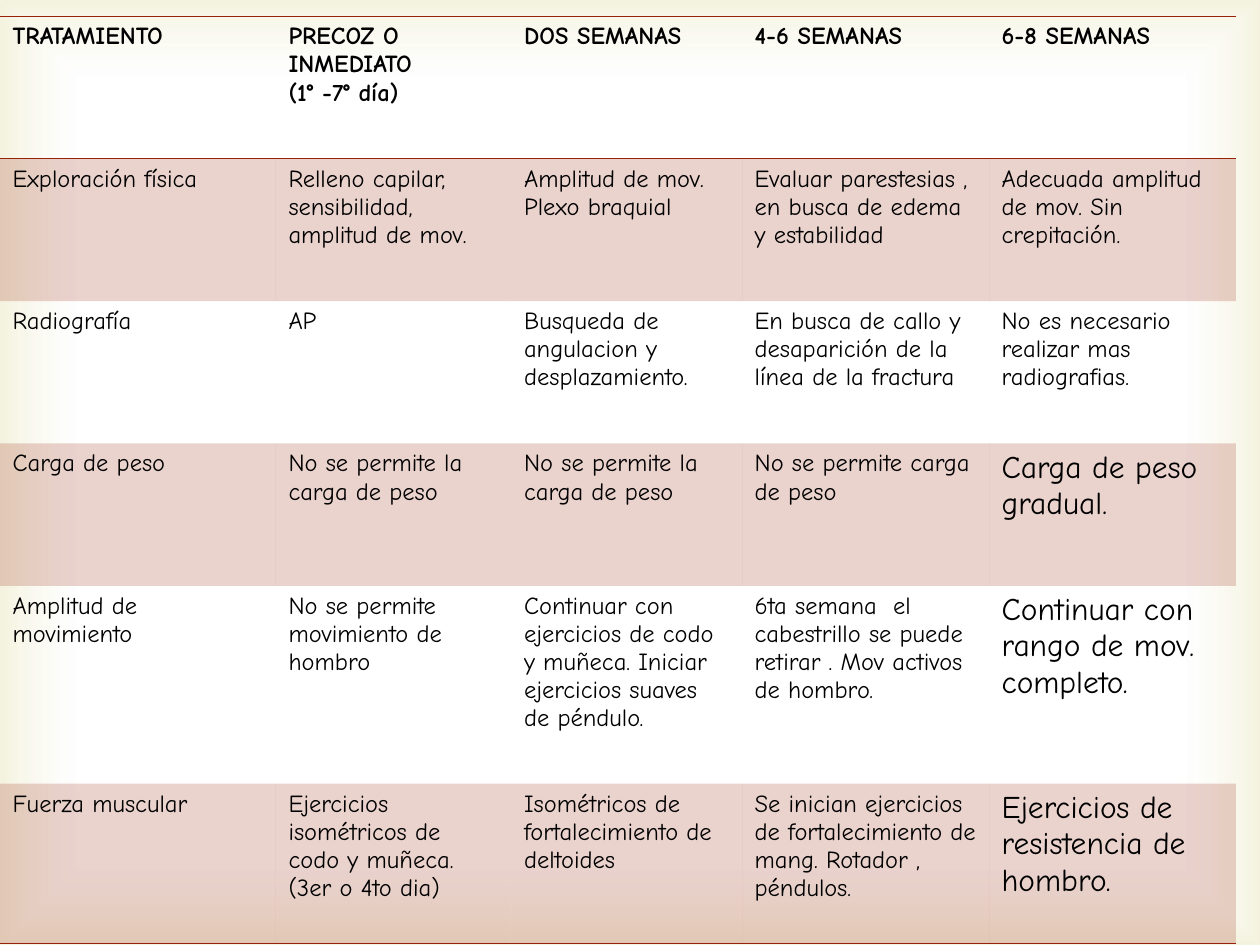
from dataclasses import dataclass

from lxml.etree import SubElement
from pptx import Presentation
from pptx.dml.color import RGBColor
from pptx.enum.shapes import MSO_SHAPE
from pptx.oxml import parse_xml
from pptx.oxml.ns import nsdecls, qn
from pptx.slide import Slide
from pptx.table import Table, _Cell
from pptx.util import Inches, Pt


@dataclass(frozen=True)
class Theme:
    font: str = "Comic Neue"
    text: str = "000000"
    accent: str = "972109"
    band_opacity: int = 20
    paper: str = "FFFFFF"
    paper_opacity: int = 11
    edge: str = "D1CA75"
    edge_opacity: int = 23
    body_size: int = 14
    large_size: int = 18
    rule_width: int = 1


@dataclass(frozen=True)
class TreatmentRow:
    height: float
    texts: tuple[str, ...]
    large_last: bool = False


THEME = Theme()
NO_GRID_STYLE = "{2D5ABB26-0587-4C30-8999-92F81FD0307C}"
COLUMN_WIDTHS = (2.19, 1.87, 1.83, 1.96, 1.96)
ROWS = (
    TreatmentRow(1.13, (
        "TRATAMIENTO",
        "PRECOZ O INMEDIATO\n(1° -7° día)",
        "DOS SEMANAS",
        "4-6 SEMANAS",
        "6-8 SEMANAS",
    )),
    TreatmentRow(1.13, (
        "Exploración física",
        "Relleno capilar, sensibilidad, amplitud de mov.",
        "Amplitud de mov. Plexo braquial",
        "Evaluar parestesias , en busca de edema y estabilidad",
        "Adecuada amplitud de mov. Sin crepitación.",
    )),
    TreatmentRow(1.13, (
        "Radiografía",
        "AP",
        "Busqueda de angulacion y desplazamiento.",
        "En busca de callo y desaparición de la línea de la fractura",
        "No es necesario realizar mas radiografias.",
    )),
    TreatmentRow(1.13, (
        "Carga de peso",
        "No se permite la carga de peso",
        "No se permite la carga de peso",
        "No se permite carga de peso",
        "Carga de peso gradual.",
    ), large_last=True),
    TreatmentRow(1.57, (
        "Amplitud de movimiento",
        "No se permite movimiento de hombro",
        "Continuar con ejercicios de codo y muñeca. Iniciar ejercicios suaves de péndulo.",
        "6ta semana  el cabestrillo se puede retirar . Mov activos de hombro.",
        "Continuar con rango de mov. completo.",
    ), large_last=True),
    TreatmentRow(1.27, (
        "Fuerza muscular",
        "Ejercicios isométricos de codo y muñeca.\n(3er o 4to dia)",
        "Isométricos de fortalecimiento de deltoides",
        "Se inician ejercicios de fortalecimiento de mang. Rotador , péndulos.",
        "Ejercicios de resistencia de hombro.",
    ), large_last=True),
)


def gradient_stop(position: int, color: str, opacity: int) -> str:
    return (f'<a:gs pos="{position * 1000}"><a:srgbClr val="{color}">'
            f'<a:alpha val="{opacity * 1000}"/></a:srgbClr></a:gs>')


def draw_background(slide: Slide, width: int, height: int) -> None:
    """Cover the slide with a clear centre fading to tinted edges."""
    background = slide.shapes.add_shape(MSO_SHAPE.RECTANGLE, 0, 0, width, height)
    background.shadow.inherit = False
    background.line.fill.background()
    background.fill.gradient()
    gradient = background._element.spPr.find(qn("a:gradFill"))
    stops = (gradient_stop(83, THEME.paper, THEME.paper_opacity)
             + gradient_stop(100, THEME.edge, THEME.edge_opacity))
    gradient.getparent().replace(gradient, parse_xml(
        f'<a:gradFill {nsdecls("a")} rotWithShape="1"><a:gsLst>{stops}</a:gsLst>'
        '<a:path path="rect"><a:fillToRect l="50000" t="50000" r="50000" b="50000"/>'
        '</a:path></a:gradFill>'))


def fill_cell(cell: _Cell, banded: bool) -> None:
    if not banded:
        cell.fill.background()
        return
    cell.fill.solid()
    cell.fill.fore_color.rgb = RGBColor.from_string(THEME.accent)
    color = cell._tc.tcPr.find(f"{qn('a:solidFill')}/{qn('a:srgbClr')}")
    SubElement(color, qn("a:alpha"), val=str(THEME.band_opacity * 1000))


def rule_cell(cell: _Cell, edges: tuple[str, ...]) -> None:
    """Draw rules on the given edges, named lnT and lnB in that order."""
    for position, edge in enumerate(edges):
        cell._tc.tcPr.insert(position, parse_xml(
            f'<a:{edge} {nsdecls("a")} w="{Pt(THEME.rule_width)}"><a:solidFill>'
            f'<a:srgbClr val="{THEME.accent}"/></a:solidFill></a:{edge}>'))


def write_cell(cell: _Cell, text: str, size: int, bold: bool) -> None:
    cell.text_frame.text = text
    for para in cell.text_frame.paragraphs:
        for span in para.runs:
            span.font.name = THEME.font
            span.font.size = Pt(size)
            span.font.bold = bold
            span.font.color.rgb = RGBColor.from_string(THEME.text)


def fill_row(table: Table, index: int, row: TreatmentRow) -> None:
    table.rows[index].height = Inches(row.height)
    edges = {0: ("lnT", "lnB"), len(ROWS) - 1: ("lnB",)}.get(index, ())
    for column, text in enumerate(row.texts):
        cell = table.cell(index, column)
        large = row.large_last and column == len(row.texts) - 1
        size = THEME.large_size if large else THEME.body_size
        write_cell(cell, text, size, bold=index == 0)
        fill_cell(cell, banded=index % 2 == 1)
        rule_cell(cell, edges)


def draw_treatment_table(slide: Slide) -> None:
    frame = slide.shapes.add_table(
        len(ROWS), len(COLUMN_WIDTHS), Inches(0), Inches(0.13),
        Inches(sum(COLUMN_WIDTHS)), Inches(sum(row.height for row in ROWS)))
    table = frame.table
    table._tbl.tblPr.find(qn("a:tableStyleId")).text = NO_GRID_STYLE
    for column, width in zip(table.columns, COLUMN_WIDTHS):
        column.width = Inches(width)
    for index, row in enumerate(ROWS):
        fill_row(table, index, row)


def main() -> None:
    deck = Presentation()
    deck.slide_width, deck.slide_height = Inches(10), Inches(7.5)
    slide = deck.slides.add_slide(deck.slide_layouts[6])
    draw_background(slide, deck.slide_width, deck.slide_height)
    draw_treatment_table(slide)
    deck.save("out.pptx")


if __name__ == "__main__":
    main()
